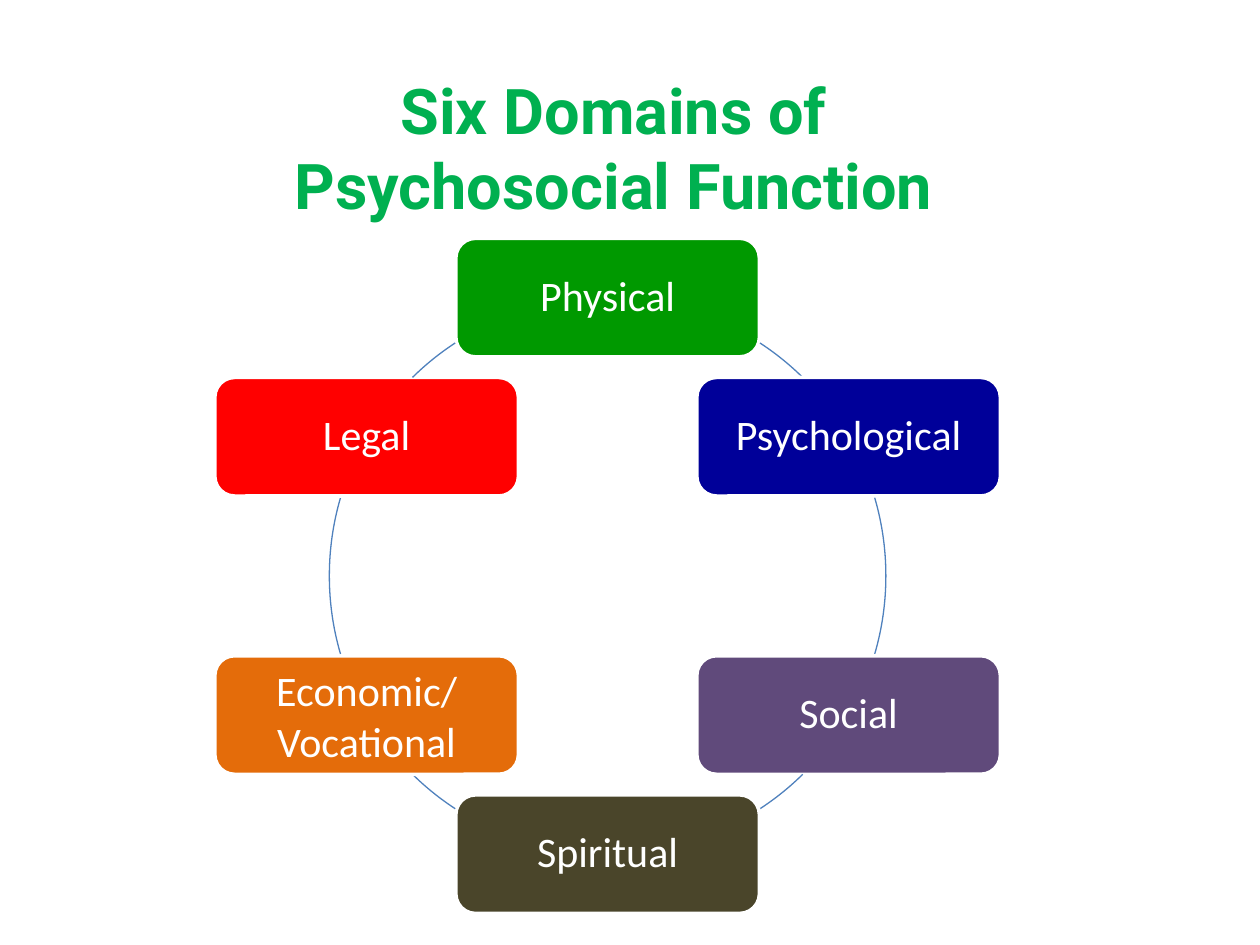
import math
from dataclasses import dataclass

import pptx
import pptx.dml.color
import pptx.enum.shapes
import pptx.enum.text
import pptx.util

Cm = pptx.util.Cm
Pt = pptx.util.Pt
RGB = pptx.dml.color.RGBColor
Kind = pptx.enum.shapes.MSO_SHAPE
Align = pptx.enum.text.PP_ALIGN
Anchor = pptx.enum.text.MSO_ANCHOR

WHITE = RGB(0xFF, 0xFF, 0xFF)
TITLE = RGB(0x00, 0xB0, 0x50)
RING = RGB(0x4F, 0x81, 0xBD)
GREEN = RGB(0x00, 0x99, 0x00)
NAVY = RGB(0x00, 0x00, 0x99)
PURPLE = RGB(0x60, 0x4A, 0x7B)
BROWN = RGB(0x4A, 0x45, 0x2A)
ORANGE = RGB(0xE4, 0x6C, 0x0A)
RED = RGB(0xFF, 0x00, 0x00)

# Ring and box sizes in cm
MID_X, MID_Y, RADIUS = 12.25, 11.61, 5.61
BOX_W, BOX_H = 6.12, 2.39


@dataclass
class Domain:
    name: str
    fill: RGB
    start: float  # arc to the next box, degrees clockwise from the right
    end: float
    pitch: float = 0.9


# Clockwise from the top
DOMAINS = [
    Domain("Physical", GREEN, 303.2, 314.5),
    Domain("Psychological", NAVY, 343.7, 16.3),
    Domain("Social", PURPLE, 45.5, 56.8),
    Domain("Spiritual", BROWN, 123.2, 134.5),
    Domain("Economic/\nVocational", ORANGE, 163.7, 196.3, 1.0),
    Domain("Legal", RED, 225.5, 236.8),
]


def draw_box(slide, item: Domain, angle: float) -> None:
    x = MID_X + RADIUS * math.cos(angle) - BOX_W / 2
    y = MID_Y + RADIUS * math.sin(angle) - BOX_H / 2
    box = slide.shapes.add_shape(
        Kind.ROUNDED_RECTANGLE, Cm(x), Cm(y), Cm(BOX_W), Cm(BOX_H))
    box.shadow.inherit = False
    box.fill.solid()
    box.fill.fore_color.rgb = item.fill
    box.line.color.rgb = WHITE
    box.line.width = Pt(2)
    frame = box.text_frame
    frame.text = item.name
    frame.word_wrap = True
    frame.vertical_anchor = Anchor.MIDDLE
    frame.margin_top = frame.margin_bottom = Cm(0.25)
    for para in frame.paragraphs:
        para.alignment = Align.CENTER
        para.line_spacing = item.pitch
        para.font.name = "Calibri"
        para.font.size = Pt(24)
        para.font.color.rgb = WHITE


def draw_arc(slide, item: Domain) -> None:
    arc = slide.shapes.add_shape(
        Kind.ARC, Cm(MID_X - RADIUS), Cm(MID_Y - RADIUS),
        Cm(2 * RADIUS), Cm(2 * RADIUS))
    arc.shadow.inherit = False
    arc.fill.background()
    arc.line.color.rgb = RING
    arc.line.width = Pt(0.75)
    # Angles are stored in 1/60000 degree, adjustments in 1/100000
    arc.adjustments[0] = item.start * 0.6
    arc.adjustments[1] = item.end * 0.6


def draw_title(slide) -> None:
    title = slide.shapes.title
    title.left, title.top = Cm(2.11), Cm(1.27)
    title.width, title.height = Cm(20.52), Cm(3.38)
    title.text_frame.text = "Six Domains of\vPsychosocial Function"
    para = title.text_frame.paragraphs[0]
    para.alignment = Align.CENTER
    para.font.name = "Roboto"
    para.font.size = Pt(36)
    para.font.bold = True
    para.font.color.rgb = TITLE


def main() -> None:
    deck = pptx.Presentation()
    deck.slide_width, deck.slide_height = Cm(25.4), Cm(19.05)
    slide = deck.slides.add_slide(deck.slide_layouts[5])
    draw_title(slide)
    # Each box is followed by the arc that leads on from it
    for i, item in enumerate(DOMAINS):
        draw_box(slide, item, math.radians(60 * i - 90))
        draw_arc(slide, item)
    deck.save("out.pptx")


if __name__ == "__main__":
    main()
